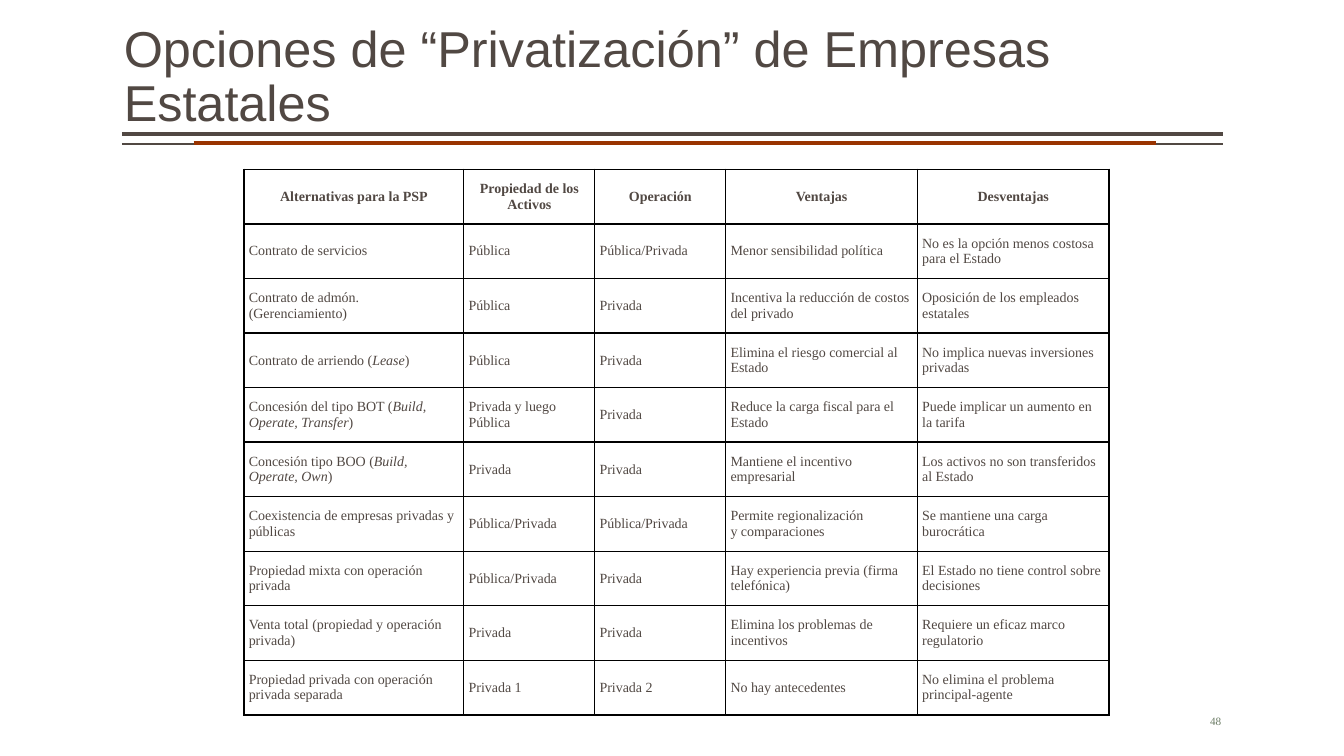
from pptx import Presentation
from pptx.dml.color import RGBColor
from pptx.enum.shapes import MSO_CONNECTOR
from pptx.enum.text import MSO_ANCHOR, PP_ALIGN
from pptx.oxml.ns import qn
from pptx.util import Cm, Pt
from lxml.etree import SubElement

GREY = RGBColor(0x51, 0x48, 0x43)
RUST = RGBColor(0x99, 0x33, 0x00)
SAGE = RGBColor(0x6D, 0x7D, 0x66)
BLACK = RGBColor(0x00, 0x00, 0x00)

SANS = "Arial"
SERIF = "Times New Roman"

WIDTHS = [5.54, 3.3, 3.3, 4.83, 4.83]

# Asterisks enclose italics; a line break starts a new paragraph
ROWS = [
    ["Alternativas para la PSP", "Propiedad de los Activos", "Operación",
     "Ventajas", "Desventajas"],
    ["Contrato de servicios", "Pública", "Pública/Privada",
     "Menor sensibilidad política",
     "No es la opción menos costosa para el Estado"],
    ["Contrato de admón. (Gerenciamiento)", "Pública", "Privada",
     "Incentiva la reducción de costos del privado",
     "Oposición de los empleados estatales"],
    ["Contrato de arriendo (*Lease*)", "Pública", "Privada",
     "Elimina el riesgo comercial al Estado",
     "No implica nuevas inversiones privadas"],
    ["Concesión del tipo BOT (*Build, Operate, Transfer*)",
     "Privada y luego Pública", "Privada",
     "Reduce la carga fiscal para el Estado",
     "Puede implicar un aumento en la tarifa"],
    ["Concesión tipo BOO (*Build, Operate, Own*)", "Privada", "Privada",
     "Mantiene el incentivo empresarial",
     "Los activos no son transferidos al Estado"],
    ["Coexistencia de empresas privadas y públicas", "Pública/Privada",
     "Pública/Privada", "Permite regionalización\ny comparaciones",
     "Se mantiene una carga burocrática"],
    ["Propiedad mixta con operación privada", "Pública/Privada", "Privada",
     "Hay experiencia previa (firma telefónica)",
     "El Estado no tiene control sobre decisiones"],
    ["Venta total (propiedad y operación privada)", "Privada", "Privada",
     "Elimina los problemas de incentivos",
     "Requiere un eficaz marco regulatorio"],
    ["Propiedad privada con operación privada separada", "Privada 1",
     "Privada 2", "No hay antecedentes",
     "No elimina el problema principal-agente"],
]


def add_run(para, text, font, size, color, bold=False, italic=False):
    run = para.add_run()
    run.text = text
    run.font.name = font
    run.font.size = Pt(size)
    run.font.color.rgb = color
    run.font.bold = bold
    run.font.italic = italic


def add_rule(slide, left, right, top, color, width):
    rule = slide.shapes.add_connector(
        MSO_CONNECTOR.STRAIGHT, Cm(left), Cm(top), Cm(right), Cm(top))
    rule.line.color.rgb = color
    rule.line.width = Pt(width)
    SubElement(rule._element.spPr, qn("a:effectLst"))


def add_label(slide, box, text, font, size, color, anchor, align, space=1.0):
    frame = slide.shapes.add_textbox(*[Cm(n) for n in box]).text_frame
    frame.word_wrap = True
    frame.vertical_anchor = anchor
    frame.margin_left = frame.margin_right = 0
    frame.margin_top = frame.margin_bottom = Cm(0.13)
    para = frame.paragraphs[0]
    para.alignment = align
    para.line_spacing = space
    add_run(para, text, font, size, color)


def set_edge(cell, side, width):
    props = cell._tc.get_or_add_tcPr()
    edge = SubElement(props, qn("a:ln" + side), w=str(Pt(width)))
    fill = SubElement(edge, qn("a:solidFill"))
    SubElement(fill, qn("a:srgbClr"), val=str(BLACK))


def fill_cell(cell, text, head):
    cell.vertical_anchor = MSO_ANCHOR.MIDDLE
    cell.margin_left = cell.margin_right = Cm(0.12)
    cell.margin_top = cell.margin_bottom = 0
    frame = cell.text_frame
    for i, line in enumerate(text.split("\n")):
        para = frame.add_paragraph() if i else frame.paragraphs[0]
        para.alignment = PP_ALIGN.CENTER if head else PP_ALIGN.LEFT
        for j, part in enumerate(line.split("*")):
            add_run(para, part, SERIF, 10, GREY, head, j % 2 == 1)


def add_grid(slide):
    last_row, last_col = len(ROWS) - 1, len(WIDTHS) - 1
    grid = slide.shapes.add_table(
        len(ROWS), len(WIDTHS), Cm(6.15), Cm(4.27),
        Cm(sum(WIDTHS)), Cm(13.74)).table
    grid.first_row = grid.horz_banding = False
    for col, width in zip(grid.columns, WIDTHS):
        col.width = Cm(width)
    for r, row in enumerate(ROWS):
        for c, text in enumerate(row):
            cell = grid.cell(r, c)
            fill_cell(cell, text, r == 0)
            # Heavier lines around the table and below the header
            heavy = {"L": c == 0, "R": c == last_col,
                     "T": r < 2, "B": r in (0, last_row)}
            for side, thick in heavy.items():
                set_edge(cell, side, 1.5 if thick else 1)
            cell.fill.background()


def main():
    deck = Presentation()
    deck.slide_width, deck.slide_height = Cm(33.87), Cm(19.05)
    slide = deck.slides.add_slide(deck.slide_layouts[6])

    # Rules under the title
    add_rule(slide, 3.07, 30.81, 3.38, GREY, 3)
    add_rule(slide, 3.07, 30.81, 3.63, GREY, 1)

    # Page number and title
    add_label(slide, (25.7, 17.65, 5.08, 1.02), "48", SERIF, 8, SAGE,
              MSO_ANCHOR.MIDDLE, PP_ALIGN.RIGHT)
    add_label(slide, (3.12, 0.38, 27.66, 3.1),
              "Opciones de “Privatización” de Empresas Estatales",
              SANS, 36, GREY, MSO_ANCHOR.BOTTOM, PP_ALIGN.LEFT, 0.9)

    # Accent rule and table of options
    add_rule(slide, 4.88, 29.13, 3.61, RUST, 3)
    add_grid(slide)

    deck.save("out.pptx")


if __name__ == "__main__":
    main()
